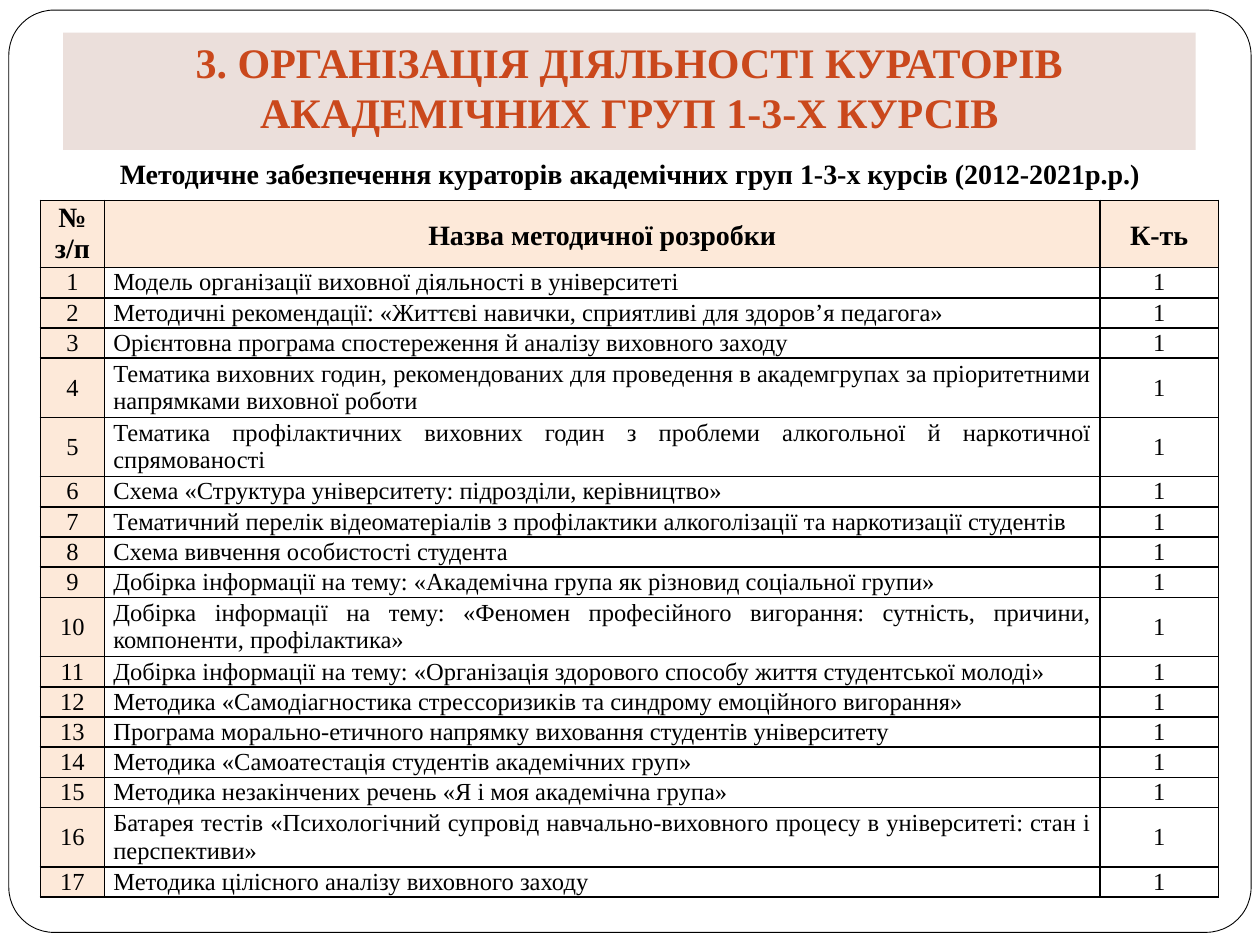
from lxml.etree import SubElement
from pptx import Presentation
from pptx.dml.color import RGBColor
from pptx.enum.shapes import MSO_SHAPE as Shape
from pptx.enum.text import MSO_ANCHOR as Anchor, MSO_AUTO_SIZE as AutoSize, PP_ALIGN as Align
from pptx.oxml.ns import qn
from pptx.util import Inches, Pt

FONT = "Times New Roman"
BLACK = RGBColor(0x00, 0x00, 0x00)
WHITE = RGBColor(0xFF, 0xFF, 0xFF)
TITLE_FILL = RGBColor(0xEB, 0xDF, 0xDB)
TITLE_COLOR = RGBColor(0xCA, 0x48, 0x1C)
CELL_FILL = RGBColor(0xFD, 0xE9, 0xD9)

TITLE = "3. ОРГАНІЗАЦІЯ ДІЯЛЬНОСТІ КУРАТОРІВ АКАДЕМІЧНИХ ГРУП 1-3-Х КУРСІВ"
SUBTITLE = "Методичне забезпечення кураторів академічних груп 1-3-х курсів (2012-2021р.р.)"
HEADERS = ["№ з/п", "Назва методичної розробки", "К-ть"]
MATERIALS = [
    "Модель організації виховної діяльності в університеті",
    "Методичні рекомендації: «Життєві навички, сприятливі для здоров’я педагога»",
    "Орієнтовна програма спостереження й аналізу виховного заходу",
    "Тематика виховних годин, рекомендованих для проведення в академгрупах за "
    "пріоритетними напрямками виховної роботи",
    "Тематика профілактичних виховних годин з проблеми алкогольної й наркотичної спрямованості",
    "Схема «Структура університету: підрозділи, керівництво»",
    "Тематичний перелік відеоматеріалів з профілактики алкоголізації та наркотизації студентів",
    "Схема вивчення особистості студента",
    "Добірка інформації на тему: «Академічна група як різновид соціальної групи»",
    "Добірка інформації на тему: «Феномен професійного вигорання: сутність, причини, "
    "компоненти, профілактика»",
    "Добірка інформації на тему: «Організація здорового способу життя студентської молоді»",
    "Методика «Самодіагностика стрессоризиків та синдрому емоційного вигорання»",
    "Програма морально-етичного напрямку виховання студентів університету",
    "Методика «Самоатестація студентів академічних груп»",
    "Методика незакінчених речень «Я і моя академічна група»",
    "Батарея тестів «Психологічний супровід навчально-виховного процесу в університеті: "
    "стан і перспективи»",
    "Методика цілісного аналізу виховного заходу",
]
TWO_LINE_ROWS = {4, 5, 10, 16}
COLUMN_WIDTHS = [0.51, 7.9, 0.94]
HEADER_HEIGHT, ROW_HEIGHT, TWO_LINE_HEIGHT = 0.53, 0.24, 0.47


def write_text(text_frame, text, size, bold=False, color=BLACK, align=Align.CENTER):
    paragraph = text_frame.paragraphs[0]
    paragraph.alignment = align
    run = paragraph.add_run()
    run.text = text
    run.font.name = FONT
    run.font.size = Pt(size)
    run.font.bold = bold
    run.font.color.rgb = color
    return paragraph


def add_frame(slide):
    shape = slide.shapes.add_shape(
        Shape.ROUNDED_RECTANGLE, Inches(0.07), Inches(0.08), Inches(9.86), Inches(7.32))
    shape.adjustments[0] = 0.049
    shape.shadow.inherit = False
    shape.fill.solid()
    shape.fill.fore_color.rgb = WHITE
    shape.line.color.rgb = BLACK
    shape.line.width = Pt(0.5)
    # Send the frame behind the title
    slide.shapes.title._element.addprevious(shape._element)


def format_title(slide):
    title = slide.shapes.title
    title.left, title.top = Inches(0.5), Inches(0.26)
    title.width, title.height = Inches(8.99), Inches(0.93)
    title.fill.solid()
    title.fill.fore_color.rgb = TITLE_FILL
    text_frame = title.text_frame
    text_frame.auto_size = AutoSize.NONE
    text_frame.word_wrap = True
    text_frame.vertical_anchor = Anchor.BOTTOM
    text_frame.margin_bottom = Inches(0.1)
    write_text(text_frame, TITLE, 24, True, TITLE_COLOR)


def add_subtitle(slide):
    box = slide.shapes.add_textbox(Inches(0.75), Inches(1.19), Inches(8.5), Inches(0.37))
    box.text_frame.word_wrap = True
    box.text_frame.auto_size = AutoSize.SHAPE_TO_FIT_TEXT
    paragraph = write_text(box.text_frame, SUBTITLE, 16, True)
    paragraph.space_before = Pt(5.8)


def add_borders(cell):
    properties = cell._tc.get_or_add_tcPr()
    for position, side in enumerate(("a:lnL", "a:lnR", "a:lnT", "a:lnB")):
        line = SubElement(properties, qn(side), w=str(Pt(1)))
        fill = SubElement(line, qn("a:solidFill"))
        SubElement(fill, qn("a:srgbClr"), val=str(BLACK))
        properties.insert(position, line)


def format_cell(cell, text, header, column):
    cell.margin_left = cell.margin_right = Inches(0.07)
    cell.margin_top = cell.margin_bottom = 0
    cell.vertical_anchor = Anchor.MIDDLE
    if header or column == 0:
        cell.fill.solid()
        cell.fill.fore_color.rgb = CELL_FILL
    else:
        cell.fill.background()
    align = Align.JUSTIFY if column == 1 and not header else Align.CENTER
    paragraph = write_text(cell.text_frame, text, 16 if header else 14, header, align=align)
    if header and column > 0:
        paragraph.line_spacing = 1.15
    add_borders(cell)


def add_materials_table(slide):
    rows = [HEADERS] + [[str(number), name, "1"] for number, name in enumerate(MATERIALS, 1)]
    heights = [HEADER_HEIGHT] + [
        TWO_LINE_HEIGHT if number in TWO_LINE_ROWS else ROW_HEIGHT
        for number in range(1, len(rows))]
    table = slide.shapes.add_table(
        len(rows), len(HEADERS), Inches(0.32), Inches(1.59),
        Inches(sum(COLUMN_WIDTHS)), Inches(sum(heights))).table
    table.horz_banding = False
    for column, width in zip(table.columns, COLUMN_WIDTHS):
        column.width = Inches(width)
    for index, (values, height) in enumerate(zip(rows, heights)):
        table.rows[index].height = Inches(height)
        for column, text in enumerate(values):
            format_cell(table.cell(index, column), text, index == 0, column)


def main():
    presentation = Presentation()
    presentation.slide_width, presentation.slide_height = Inches(10), Inches(7.5)
    slide = presentation.slides.add_slide(presentation.slide_layouts[5])
    add_frame(slide)
    format_title(slide)
    add_subtitle(slide)
    add_materials_table(slide)
    presentation.save("out.pptx")


if __name__ == "__main__":
    main()
